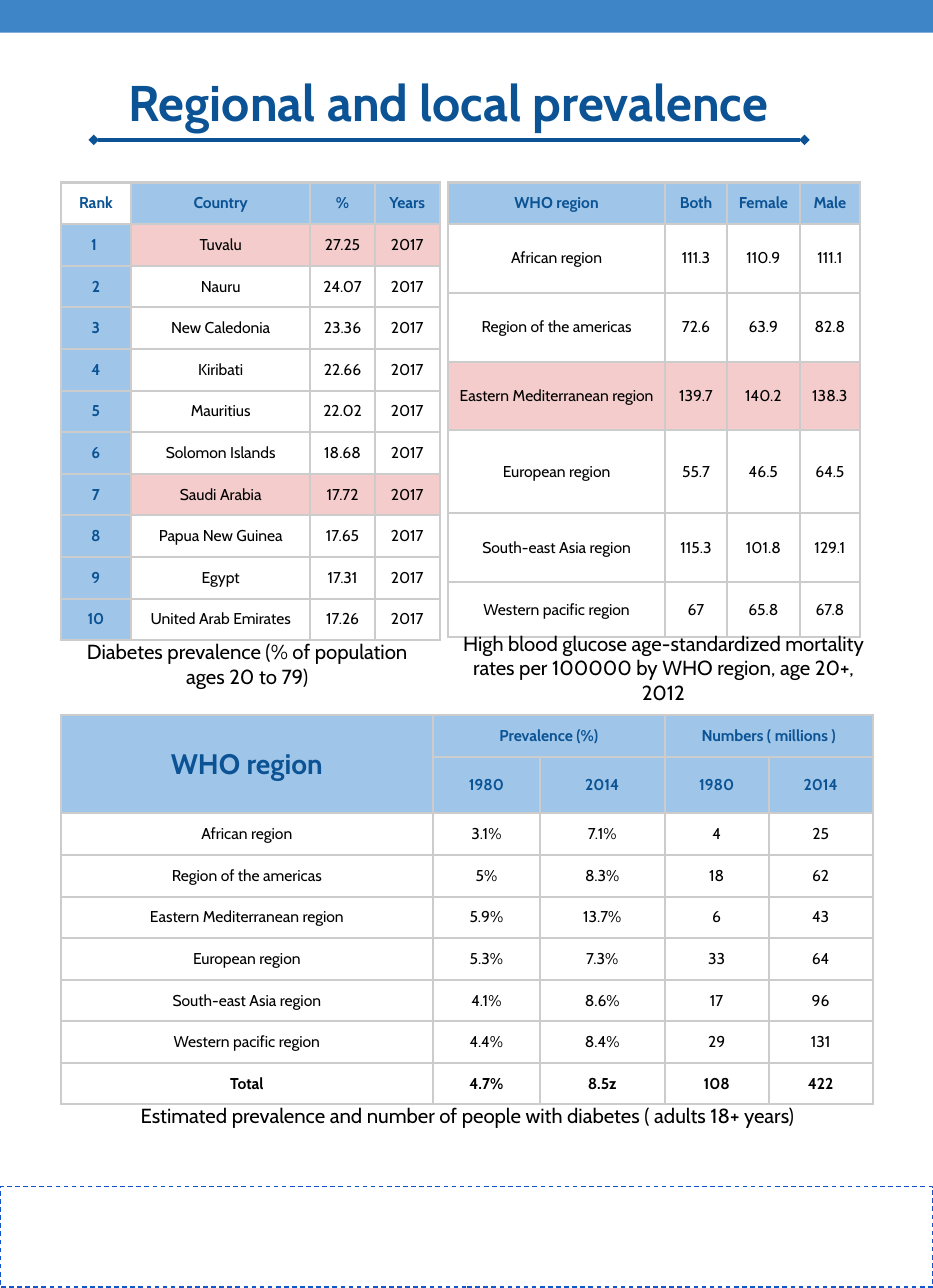
from lxml.etree import SubElement
from pptx import Presentation
from pptx.dml.color import RGBColor
from pptx.enum.dml import MSO_LINE
from pptx.enum.shapes import MSO_CONNECTOR, MSO_SHAPE
from pptx.enum.text import MSO_ANCHOR, MSO_AUTO_SIZE, PP_ALIGN
from pptx.oxml.ns import qn
from pptx.util import Pt

HEX = {
    "bar": "3D85C6", "dash": "1155CC", "navy": "0B5394", "head": "9FC5E8",
    "mark": "F4CCCC", "grid": "CCCCCC", "ink": "000000",
}
ROW = 26.55

RANKS = [
    ["Rank", "Country", "%", "Years"],
    ["1 ", "Tuvalu", "27.25", "2017"],
    ["2", "Nauru", "24.07", "2017"],
    ["3", "New Caledonia", "23.36", "2017"],
    ["4", "Kiribati", "22.66", "2017"],
    ["5", "Mauritius", "22.02", "2017"],
    ["6", "Solomon Islands", "18.68", "2017"],
    ["7", "Saudi Arabia", "17.72", "2017"],
    ["8", "Papua New Guinea", "17.65", "2017"],
    ["9", "Egypt", "17.31", "2017"],
    ["10", "United Arab Emirates", "17.26", "2017"],
]
DEATHS = [
    ["WHO region", "Both", "Female", "Male"],
    ["African region", "111.3", "110.9", "111.1"],
    ["Region of the americas", "72.6", "63.9", "82.8"],
    ["Eastern Mediterranean region", "139.7", "140.2", "138.3"],
    ["European region", "55.7", "46.5", "64.5"],
    ["South-east Asia region", "115.3", "101.8", "129.1"],
    ["Western pacific region", "67", "65.8", "67.8"],
]
TRENDS = [
    ["WHO region", "Prevalence (%)", "", "Numbers ( millions )", ""],
    ["", "1980", "2014", "1980", "2014"],
    ["African region", "3.1%", "7.1%", "4", "25"],
    ["Region of the americas", "5%", "8.3%", "18", "62"],
    ["Eastern Mediterranean region", "5.9%", "13.7%", "6", "43"],
    ["European region", "5.3%", "7.3%", "33", "64"],
    ["South-east Asia region", "4.1%", "8.6%", "17", "96"],
    ["Western pacific region", "4.4%", "8.4%", "29", "131"],
    ["Total", "4.7%", "8.5z", "108", "422"],
]


def rgb(name):
    return RGBColor.from_string(HEX[name])


def put(frame, text, size=10, color="ink", bold=False, inset=7.2):
    frame.word_wrap = True
    frame.margin_left = frame.margin_right = Pt(inset)
    frame.margin_top = frame.margin_bottom = Pt(inset)
    para = frame.paragraphs[0]
    para.alignment = PP_ALIGN.CENTER
    run = para.add_run()
    run.text = text
    font = run.font
    font.name, font.size, font.bold = "Cabin", Pt(size), bold
    font.color.rgb = rgb(color)


def rank_look(row, col):
    if row == 0 and col == 0:
        return None, {"color": "navy", "bold": True}
    if row == 0 or col == 0:
        return "head", {"color": "navy", "bold": True}
    return ("mark" if row in (1, 7) else None), {}


def death_look(row, col):
    if row == 0:
        return "head", {"color": "navy", "bold": True}
    return ("mark" if row == 3 else None), {}


def trend_look(row, col):
    if row < 2:
        size = 18 if col == 0 else 10
        return "head", {"color": "navy", "bold": True, "size": size}
    return None, {"bold": row == 8}


class Sheet:
    def __init__(self, deck):
        self.slide = deck.slides.add_slide(deck.slide_layouts[5])
        self.shapes = self.slide.shapes

    def title(self, text, *box):
        shape = self.shapes.title
        shape.left, shape.top, shape.width, shape.height = map(Pt, box)
        frame = shape.text_frame
        put(frame, text, size=32, color="navy", bold=True, inset=9.4)
        frame.auto_size = MSO_AUTO_SIZE.NONE
        frame.vertical_anchor = MSO_ANCHOR.MIDDLE

    def rect(self, *box, fill=None, dash=None):
        shape = self.shapes.add_shape(MSO_SHAPE.RECTANGLE, *map(Pt, box))
        shape.shadow.inherit = False
        if fill:
            shape.fill.solid()
            shape.fill.fore_color.rgb = rgb(fill)
        else:
            shape.fill.background()
        if dash:
            shape.line.color.rgb = rgb(dash)
            shape.line.width = Pt(0.75)
            shape.line.dash_style = MSO_LINE.DASH
        else:
            shape.line.fill.background()

    def rule(self, *ends):
        line = self.shapes.add_connector(MSO_CONNECTOR.STRAIGHT, *map(Pt, ends))
        line.line.color.rgb = rgb("navy")
        line.line.width = Pt(2.25)
        prop = line.line._get_or_add_ln()
        for tag in ("a:headEnd", "a:tailEnd"):
            SubElement(prop, qn(tag), type="diamond")
        SubElement(line._element.spPr, qn("a:effectLst"))

    def note(self, text, *box):
        frame = self.shapes.add_textbox(*map(Pt, box)).text_frame
        put(frame, text, size=13)
        frame.vertical_anchor = MSO_ANCHOR.MIDDLE

    def edge(self, cell):
        prop = cell._tc.get_or_add_tcPr()
        for side in "LRTB":
            line = SubElement(prop, qn("a:ln" + side), w=str(Pt(1.5)))
            fill = SubElement(line, qn("a:solidFill"))
            SubElement(fill, qn("a:srgbClr"), val=HEX["grid"])

    def table(self, left, top, cols, rows, data, look, spans=(), anchor=MSO_ANCHOR.MIDDLE):
        box = map(Pt, (left, top, sum(cols), sum(rows)))
        table = self.shapes.add_table(len(rows), len(cols), *box).table
        table.first_row = table.horz_banding = False
        for col, width in zip(table.columns, cols):
            col.width = Pt(width)
        for row, height in zip(table.rows, rows):
            row.height = Pt(height)
        for start, end in spans:
            table.cell(*start).merge(table.cell(*end))
        for r, line in enumerate(data):
            for c, text in enumerate(line):
                cell = table.cell(r, c)
                fill, style = look(r, c)
                self.edge(cell)
                if fill:
                    cell.fill.solid()
                    cell.fill.fore_color.rgb = rgb(fill)
                else:
                    cell.fill.background()
                if not cell.is_spanned:
                    put(cell.text_frame, text, **style)
                    cell.margin_left = cell.margin_right = Pt(7.2)
                    cell.margin_top = cell.margin_bottom = Pt(7.2)
                    cell.vertical_anchor = anchor


def main():
    deck = Presentation()
    deck.slide_width, deck.slide_height = Pt(595.44), Pt(822.24)
    sheet = Sheet(deck)
    sheet.rect(-10.8, -7.9, 617.8, 28.8, fill="bar")
    sheet.rect(0, 757.5, 595.44, 64.1, dash="dash")
    sheet.title("Regional and local prevalence", -11.5, 41, 595.44, 48.2)
    sheet.rule(59.8, 89.3, 513.4, 89.3)
    sheet.table(38.7, 116.5, [45, 114.3, 41.3, 41.3], [ROW] * 11, RANKS, rank_look,
                anchor=MSO_ANCHOR.TOP)
    sheet.note("Diabetes prevalence (% of population ages 20 to 79)", 38.9, 410.4, 237.6, 26.6)
    sheet.table(286, 116.5, [138.4, 39.6, 46.4, 38.6],
                [ROW, 43.9, 43.9, 43.9, 53.1, 43.9, 35.2], DEATHS, death_look)
    sheet.note("High blood glucose age-standardized mortality rates per 100000 "
               "by WHO region, age 20+, 2012", 280.8, 406.8, 285.1, 38.9)
    sheet.table(38.7, 456.5, [237.6, 68.2, 79.7, 66.4, 66.4],
                [ROW, 36.3] + [ROW] * 7, TRENDS, trend_look,
                spans=[((0, 0), (1, 0)), ((0, 1), (0, 2)), ((0, 3), (0, 4))])
    sheet.note("Estimated prevalence and number of people with diabetes ( adults 18+ years)",
               60.5, 694.1, 475.2, 35.3)
    deck.save("out.pptx")


if __name__ == "__main__":
    main()
